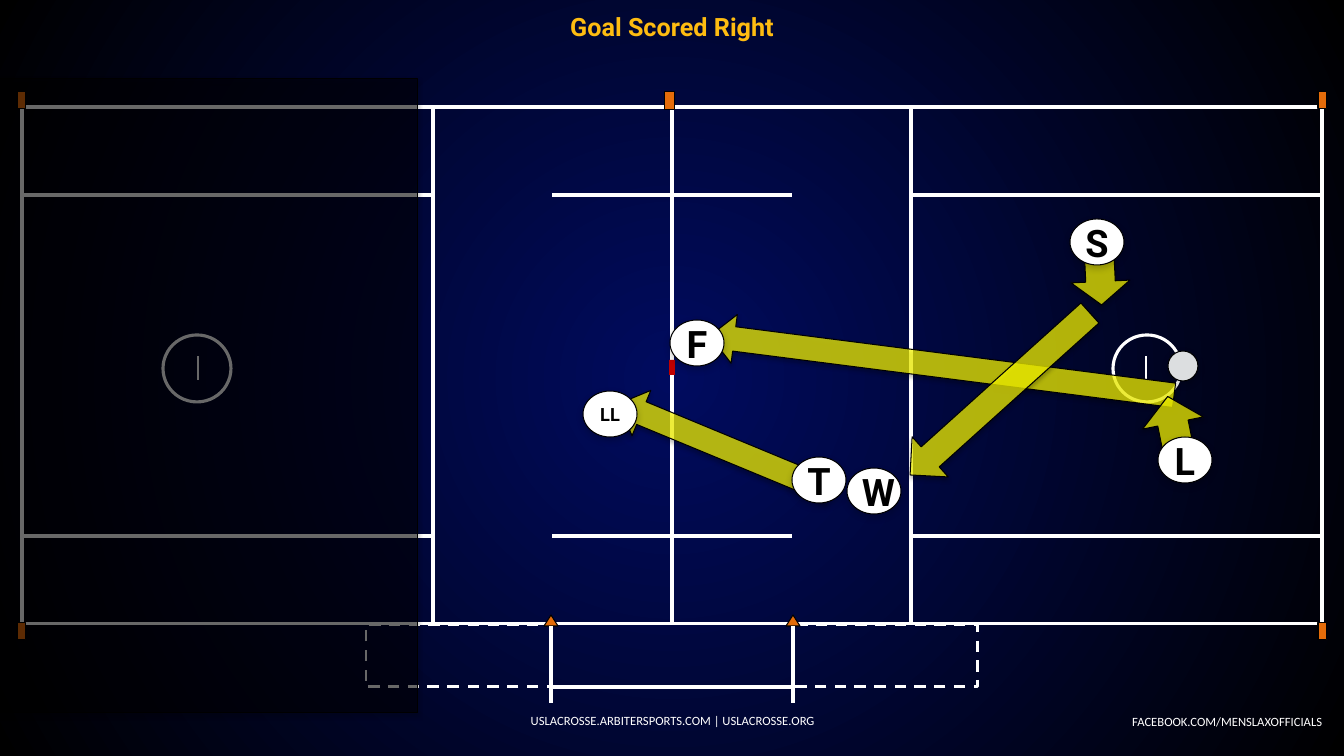
"""Build the lacrosse officiating diagram for a goal scored on the right."""
from dataclasses import dataclass

from lxml import etree
from pptx import Presentation
from pptx.dml.color import RGBColor
from pptx.enum.dml import MSO_LINE
from pptx.enum.shapes import MSO_CONNECTOR, MSO_SHAPE
from pptx.enum.text import MSO_ANCHOR, MSO_AUTO_SIZE, PP_ALIGN
from pptx.oxml.ns import qn
from pptx.util import Emu, Pt

RECTANGLE, OVAL, ARROW = MSO_SHAPE.RECTANGLE, MSO_SHAPE.OVAL, MSO_SHAPE.RIGHT_ARROW
STRAIGHT = MSO_CONNECTOR.STRAIGHT
DASH = MSO_LINE.DASH
MIDDLE = MSO_ANCHOR.MIDDLE
CENTER, RIGHT = PP_ALIGN.CENTER, PP_ALIGN.RIGHT
NO_AUTOFIT = MSO_AUTO_SIZE.NONE
TITLE_ONLY = 5
EMU_PER_PX = 914400 / 100.8
PAGE_WIDTH, PAGE_HEIGHT = 1344, 756
CENTER_X = PAGE_WIDTH // 2


def px(length):
    return Emu(round(length * EMU_PER_PX))


@dataclass(frozen=True)
class Theme:
    white: str = "FFFFFF"
    black: str = "000000"
    navy: str = "000B5F"
    gold: str = "FEBC11"
    orange: str = "E46C0A"
    red: str = "C00000"
    yellow: str = "FFFF00"
    ball: str = "DCDEE0"
    heading_font: str = "Roboto"
    footer_font: str = "Calibri"
    title_size: int = 18
    letter_size: int = 27
    pair_size: int = 13
    footer_size: int = 9
    field_line: float = 2.25
    bench_line: float = 2
    goal_line: float = 1.5
    outline: float = 0.75
    soft_shadow: tuple = (35, 3.1, 1.8)
    disc_shadow: tuple = (20, 5, 2)


class FieldPage:
    def __init__(self, deck, theme):
        self.theme = theme
        self.page = deck.slides.add_slide(deck.slide_layouts[TITLE_ONLY])
        self.shapes = self.page.shapes

    def background(self):
        fill = self.page.background.fill
        fill.gradient()
        for stop, color in zip(fill.gradient_stops, (self.theme.navy, self.theme.black)):
            stop.color.rgb = RGBColor.from_string(color)
        gradient = self.page.element.find(".//" + qn("a:gradFill"))
        linear = gradient.find(qn("a:lin"))
        radial = etree.Element(qn("a:path"), path="circle")
        etree.SubElement(radial, qn("a:fillToRect"), l="50000", t="50000", r="50000", b="50000")
        gradient.replace(linear, radial)

    def style(self, shape, fill=None, line=None, weight=None, dash=None, alpha=None, shadow=None):
        if fill:
            shape.fill.solid()
            shape.fill.fore_color.rgb = RGBColor.from_string(fill)
        else:
            shape.fill.background()
        if alpha:
            color = shape.element.spPr.find(qn("a:solidFill"))[0]
            etree.SubElement(color, qn("a:alpha"), val=str(alpha * 1000))
        if line:
            shape.line.color.rgb = RGBColor.from_string(line)
            shape.line.width = Pt(weight or self.theme.outline)
            if dash:
                shape.line.dash_style = dash
        else:
            shape.line.fill.background()
        shape.shadow.inherit = False
        if shadow:
            self.cast_shadow(shape, *shadow)

    def cast_shadow(self, shape, alpha, blur, distance):
        effects = shape.element.spPr.find(qn("a:effectLst"))
        outer = etree.SubElement(effects, qn("a:outerShdw"), blurRad=str(int(Pt(blur))),
                                 dist=str(int(Pt(distance))), dir="5400000", rotWithShape="0")
        color = etree.SubElement(outer, qn("a:srgbClr"), val=self.theme.black)
        etree.SubElement(color, qn("a:alpha"), val=str(alpha * 1000))

    def shape(self, kind, place, **look):
        shape = self.shapes.add_shape(kind, *map(px, place))
        self.style(shape, **look)
        return shape

    def line(self, x1, y1, x2, y2, weight):
        line = self.shapes.add_connector(STRAIGHT, px(x1), px(y1), px(x2), px(y2))
        line.line.color.rgb = RGBColor.from_string(self.theme.white)
        line.line.width = Pt(weight)
        etree.SubElement(line.element.spPr, qn("a:effectLst"))

    def marking(self, place, kind=RECTANGLE):
        self.shape(kind, place, line=self.theme.white, weight=self.theme.field_line)

    def cone(self, place):
        self.shape(RECTANGLE, place, fill=self.theme.orange, line=self.theme.black)

    def gate_marker(self, x):
        builder = self.shapes.build_freeform(x, 615, scale=EMU_PER_PX)
        builder.add_line_segments([(x + 7, 626), (x - 7, 626)], close=True)
        self.style(builder.convert_to_shape(), fill=self.theme.orange, line=self.theme.black)

    def half_field(self, mirrored):
        theme = self.theme

        def side(x, width=0):
            return PAGE_WIDTH - x - width if mirrored else x

        def box(x, y, width, height):
            return side(x, width), y, width, height

        for area in ((433, 107, 239, 517), (22, 107, 411, 88), (22, 536, 411, 88)):
            self.marking(box(*area))
        for y in (92, 623):
            self.cone(box(17, y, 9, 17))
        self.shape(RECTANGLE, box(366, 625, 185, 62), line=theme.white,
                   weight=theme.bench_line, dash=DASH)
        self.gate_marker(side(551))
        self.marking(box(163, 335, 68, 67), OVAL)
        self.line(side(198), 380, side(198), 356, theme.goal_line)
        self.line(side(551), 703, side(551), 626, theme.field_line)
        self.marking(box(22, 195, 411, 341))
        for y in (536, 195, 687):
            self.line(CENTER_X, y, side(552), y, theme.field_line)

    def arrow(self, place, angle):
        arrow = self.shape(ARROW, place, fill=self.theme.yellow, line=self.theme.black,
                           alpha=70, shadow=self.theme.soft_shadow)
        arrow.rotation = angle

    def official(self, letters, x, y):
        theme = self.theme
        disc = self.shape(OVAL, (x, y, 54, 46), fill=theme.white, line=theme.black,
                          shadow=theme.disc_shadow)
        frame = disc.text_frame
        frame.margin_left = frame.margin_right = frame.margin_top = frame.margin_bottom = px(7)
        size = theme.letter_size if len(letters) == 1 else theme.pair_size
        self.label(frame, letters, size, theme.heading_font, theme.black, bold=True)

    def label(self, frame, words, size, font, color, align=CENTER, bold=False, wrap=True):
        frame.word_wrap = wrap
        frame.vertical_anchor = MIDDLE
        para = frame.paragraphs[0]
        para.alignment = align
        span = para.add_run()
        span.text = words
        span.font.size = Pt(size)
        span.font.name = font
        span.font.bold = bold
        span.font.color.rgb = RGBColor.from_string(color)

    def title(self, words):
        theme = self.theme
        title = self.shapes.title
        title.left, title.top, title.width, title.height = map(px, (0, 5, PAGE_WIDTH, 42))
        title.text_frame.auto_size = NO_AUTOFIT
        self.label(title.text_frame, words, theme.title_size, theme.heading_font,
                   theme.gold, bold=True)

    def footer(self, words, place, align, wrap):
        theme = self.theme
        box = self.shapes.add_textbox(*map(px, place))
        self.label(box.text_frame, words, theme.footer_size, theme.footer_font,
                   theme.white, align, wrap=wrap)


def main():
    deck = Presentation()
    deck.slide_width, deck.slide_height = px(PAGE_WIDTH), px(PAGE_HEIGHT)
    theme = Theme()
    field = FieldPage(deck, theme)
    field.background()
    field.title("Goal Scored Right")
    for mirrored in (False, True):
        field.half_field(mirrored)
    field.cone((665, 92, 10, 18))
    field.shape(RECTANGLE, (669, 360, 6, 15), fill=theme.red)
    field.footer("FACEBOOK.COM/MENSLAXOFFICIALS", (1118, 709, 214, 25), RIGHT, False)
    for place, angle in (((708, 341, 468, 49), 187.3), ((879, 367, 242, 54), 138),
                         ((610, 423, 229, 49), 202.5), ((1077, 252, 47, 59), 87.3),
                         ((1146, 392, 54, 62), 258.7)):
        field.arrow(place, angle)
    field.shape(RECTANGLE, (-25, 79, 443, 634), fill=theme.black, line=theme.black,
                alpha=50, shadow=theme.soft_shadow)
    field.shape(OVAL, (1168, 351, 30, 30), fill=theme.ball, line=theme.black,
                shadow=theme.disc_shadow)
    for letters, x, y in (("S", 1070, 219), ("T", 792, 457), ("L", 1158, 437),
                          ("LL", 583, 391), ("F", 670, 320), ("W", 847, 468)):
        field.official(letters, x, y)
    field.footer("USLACROSSE.ARBITERSPORTS.COM | USLACROSSE.ORG",
                 (460, 701, 425, 40), CENTER, True)
    deck.save("out.pptx")


if __name__ == "__main__":
    main()
